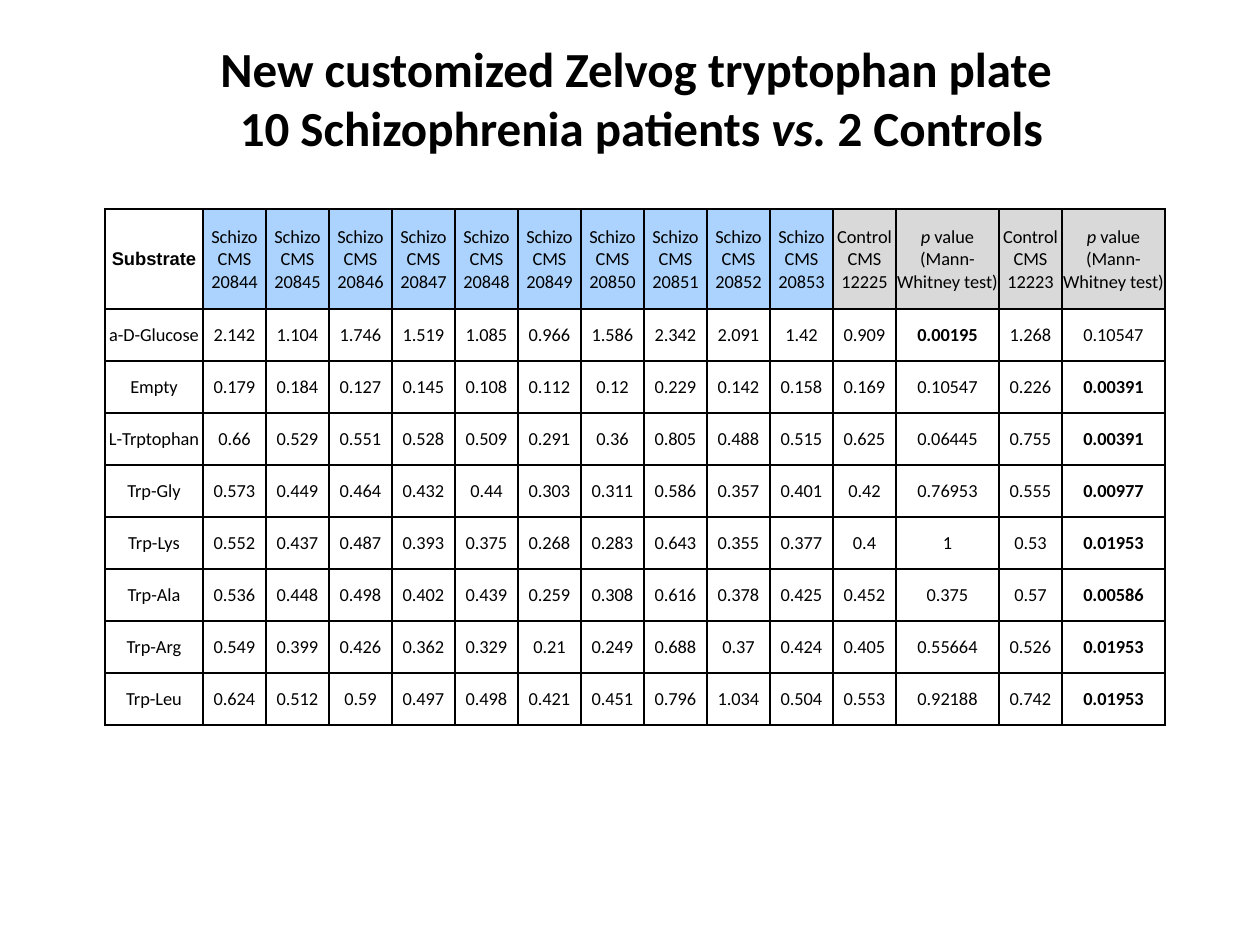
import pptx
import pptx.dml.color
import pptx.enum.text
import pptx.oxml
import pptx.oxml.ns
import pptx.util

PX = 914400 / 126
HUES = {"ink": "000000", "case": "ACD3FE", "ctrl": "D9D9D9"}
MID = pptx.enum.text.MSO_ANCHOR.MIDDLE
CENTER = pptx.enum.text.PP_ALIGN.CENTER
HEAD = {"name": "Calibri", "size": pptx.util.Pt(28), "bold": True}
BODY = {"name": "Calibri", "size": pptx.util.Pt(10.5), "bold": False}
LABEL = {**BODY, "name": "Arial", "bold": True}
SLANT = {"italic": True}
PAD = {"margin_left": 1, "margin_top": 1, "margin_right": 1, "margin_bottom": 0}

TITLE = [
    [("New customized Zelvog tryptophan plate ", {})],
    [("10 Schizophrenia patients ", {}), ("vs. ", SLANT), ("2 Controls", {})],
]
P_HEAD = [("p", SLANT), (" value (Mann-Whitney test)", {})]
P_COLS = (12, 14)
DATA = """
a-D-Glucose 2.142 1.104 1.746 1.519 1.085 0.966 1.586 2.342 2.091 1.42 0.909 0.00195 1.268 0.10547
Empty 0.179 0.184 0.127 0.145 0.108 0.112 0.12 0.229 0.142 0.158 0.169 0.10547 0.226 0.00391
L-Trptophan 0.66 0.529 0.551 0.528 0.509 0.291 0.36 0.805 0.488 0.515 0.625 0.06445 0.755 0.00391
Trp-Gly 0.573 0.449 0.464 0.432 0.44 0.303 0.311 0.586 0.357 0.401 0.42 0.76953 0.555 0.00977
Trp-Lys 0.552 0.437 0.487 0.393 0.375 0.268 0.283 0.643 0.355 0.377 0.4 1 0.53 0.01953
Trp-Ala 0.536 0.448 0.498 0.402 0.439 0.259 0.308 0.616 0.378 0.425 0.452 0.375 0.57 0.00586
Trp-Arg 0.549 0.399 0.426 0.362 0.329 0.21 0.249 0.688 0.37 0.424 0.405 0.55664 0.526 0.01953
Trp-Leu 0.624 0.512 0.59 0.497 0.498 0.421 0.451 0.796 1.034 0.504 0.553 0.92188 0.742 0.01953
"""


def emu(px):
    return pptx.util.Emu(round(px * PX))


def color(key):
    return pptx.dml.color.RGBColor.from_string(HUES[key])


def write(para, runs, base):
    """Fill a centred paragraph with (text, extra format) runs."""
    para.alignment = CENTER
    for text, extra in runs:
        run = para.add_run()
        run.text = text
        for key, value in {**base, **extra}.items():
            setattr(run.font, key, value)
        run.font.color.rgb = color("ink")


def border(cell):
    props = cell._tc.get_or_add_tcPr()
    space = pptx.oxml.ns.nsdecls("a")
    for side in "LRTB":
        props.append(pptx.oxml.parse_xml(
            f'<a:ln{side} {space} w="12700"><a:solidFill>'
            f'<a:srgbClr val="{HUES["ink"]}"/></a:solidFill></a:ln{side}>'))


def style(cell, runs, base, hue=None):
    cell.vertical_anchor = MID
    for key, px in PAD.items():
        setattr(cell, key, emu(px))
    border(cell)
    if hue:
        cell.fill.solid()
        cell.fill.fore_color.rgb = color(hue)
    else:
        cell.fill.background()
    write(cell.text_frame.paragraphs[0], runs, base)


def add_title(slide, box):
    frame = slide.shapes.add_textbox(*map(emu, box)).text_frame
    frame.word_wrap = True
    for i, runs in enumerate(TITLE):
        para = frame.add_paragraph() if i else frame.paragraphs[0]
        write(para, runs, HEAD)


def heads():
    """Return the header cells as (runs, format, hue)."""
    cases = [([(f"Schizo CMS {num}", {})], BODY, "case")
             for num in range(20844, 20854)]
    ctrls = []
    for num in (12225, 12223):
        ctrls += [([(f"Control CMS {num}", {})], BODY, "ctrl"),
                  (P_HEAD, BODY, "ctrl")]
    return [([("Substrate", {})], LABEL, None), *cases, *ctrls]


def add_grid(slide, box):
    rows = [line.split() for line in DATA.strip().splitlines()]
    cols = [98] + [63] * 11 + [103, 63, 103]
    tall = [100] + [52] * len(rows)
    table = slide.shapes.add_table(len(tall), len(cols), *map(emu, box)).table
    table.first_row = table.horz_banding = False
    for col, px in zip(table.columns, cols):
        col.width = emu(px)
    for row, px in zip(table.rows, tall):
        row.height = emu(px)
    for c, head in enumerate(heads()):
        style(table.cell(0, c), *head)
    for r, row in enumerate(rows, 1):
        for c, text in enumerate(row):
            bold = c in P_COLS and float(text) < 0.05
            style(table.cell(r, c), [(text, {"bold": bold})], BODY)


def main():
    deck = pptx.Presentation()
    deck.slide_width, deck.slide_height = emu(1260), emu(945)
    slide = deck.slides.add_slide(deck.slide_layouts[6])
    add_grid(slide, (105, 209, 1060, 516))
    add_title(slide, (86, 32, 1111, 131))
    deck.save("out.pptx")


if __name__ == "__main__":
    main()
